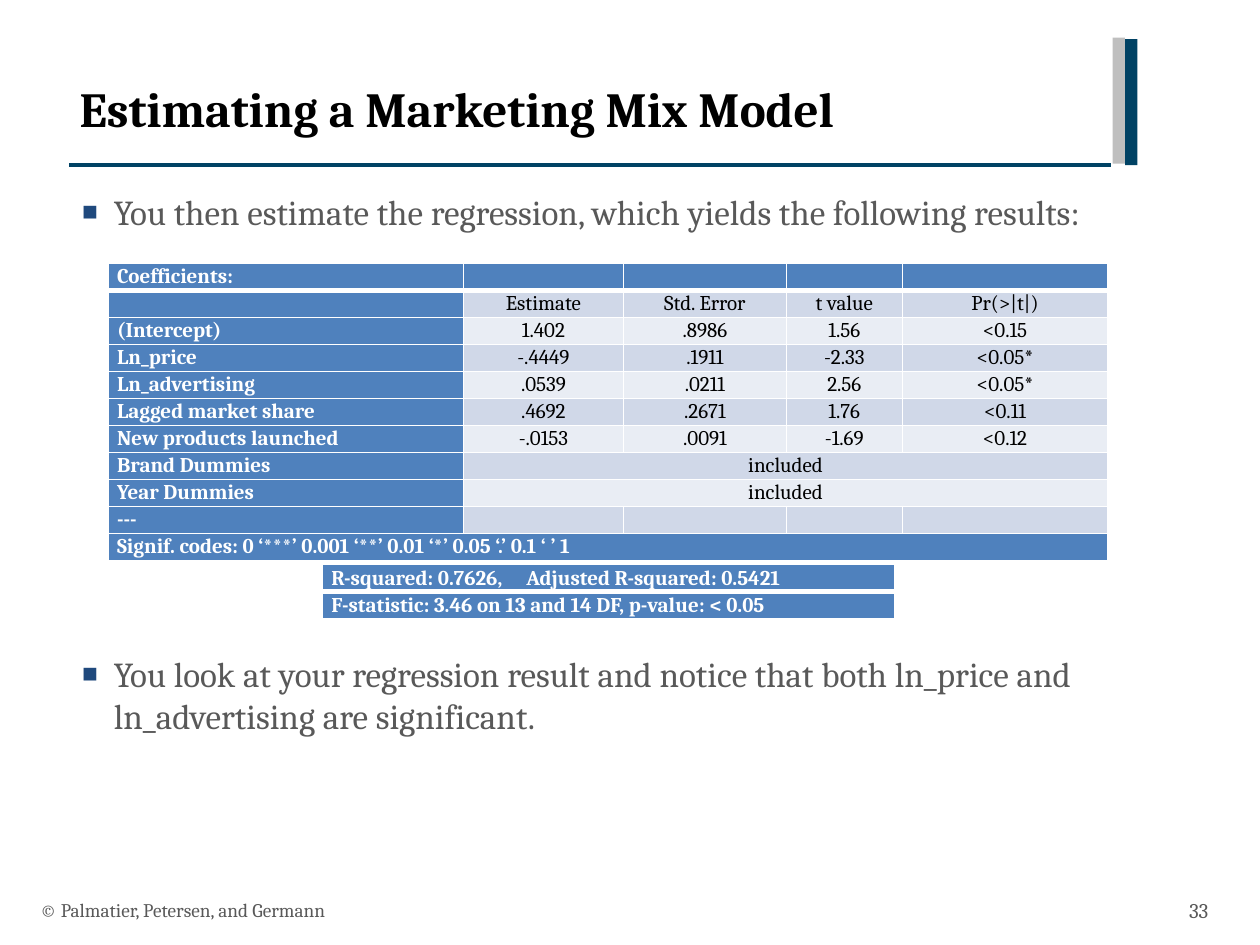
from dataclasses import dataclass
from typing import NamedTuple

from lxml import etree
from pptx import Presentation
from pptx.dml.color import RGBColor
from pptx.enum.shapes import MSO_CONNECTOR, MSO_SHAPE
from pptx.enum.text import MSO_ANCHOR, MSO_AUTO_SIZE, PP_ALIGN
from pptx.oxml.ns import qn
from pptx.util import Cm, Pt

LEFT, MID, RIGHT = PP_ALIGN.LEFT, PP_ALIGN.CENTER, PP_ALIGN.RIGHT
TOP, CENTRE = MSO_ANCHOR.TOP, MSO_ANCHOR.MIDDLE
FIXED = MSO_AUTO_SIZE.NONE
RECT, STRAIGHT = MSO_SHAPE.RECTANGLE, MSO_CONNECTOR.STRAIGHT


@dataclass(frozen=True)
class Theme:
    face: str = "Cambria"
    ink: str = "000000"
    text: str = "595959"
    white: str = "FFFFFF"
    navy: str = "004264"
    silver: str = "BFBFBF"
    mark: str = "1F497D"
    head: str = "4F81BD"
    dark: str = "D0D8E8"
    light: str = "E9EDF4"
    title: int = 28
    body: int = 20
    cell: int = 12
    page: int = 12
    credit: int = 11


class Box(NamedTuple):
    left: float
    top: float
    width: float
    height: float


class Bar(NamedTuple):
    box: Box
    fill: str


class Note(NamedTuple):
    text: str
    box: Box
    size: int
    align: PP_ALIGN


class Grid(NamedTuple):
    left: float
    top: float
    cols: list[float]
    rows: list[list[str]]
    thick: int  # index of the row with the heavy lower border


THEME = Theme()
ROW = 0.52
BARS = [
    Bar(Box(22.68, 0.79, 0.25, 2.54), THEME.navy),
    Bar(Box(22.43, 0.76, 0.25, 2.54), THEME.silver),
]
NOTES = [
    Note("© Palmatier, Petersen, and Germann", Box(0.56, 17.83, 17.02, 1.02),
         THEME.credit, LEFT),
    Note("33", Box(23.06, 17.83, 1.55, 1.02), THEME.page, RIGHT),
]
POINTS = [
    ("You then estimate the regression, which yields the following results:", 0),
    ("You look at your regression result and notice that both ln_price and "
     "ln_advertising are significant.", 240),
]
# A row shorter than the grid has its last cell spread over the rest.
MODEL = Grid(2.18, 5.31, [7.16, 3.23, 3.28, 2.34, 4.14], [
    ["Coefficients:", "", "", "", ""],
    ["", "Estimate", "Std. Error", "t value", "Pr(>|t|)"],
    ["(Intercept)", "1.402", ".8986", "1.56", "<0.15"],
    ["Ln_price", "-.4449", ".1911", "-2.33", "<0.05*"],
    ["Ln_advertising", ".0539", ".0211", "2.56", "<0.05*"],
    ["Lagged market share", ".4692", ".2671", "1.76", "<0.11"],
    ["New products launched", "-.0153", ".0091", "-1.69", "<0.12"],
    ["Brand Dummies", "included"],
    ["Year Dummies", "included"],
    ["---", "", "", "", ""],
    ["Signif. codes: 0 ‘***’ 0.001 ‘**’ 0.01 ‘*’ 0.05 ‘.’ 0.1 ‘ ’ 1"],
], 0)
FIT = Grid(6.5, 11.38, [11.53], [
    ["R-squared: 0.7626,\tAdjusted R-squared: 0.5421"],
    ["F-statistic: 3.46 on 13 and 14 DF, p-value: < 0.05"],
], 0)


def rgb(code: str) -> RGBColor:
    return RGBColor.from_string(code)


def add(parent, tag: str, **attrs):
    return etree.SubElement(parent, qn(tag), attrs)


def apply(thing, values: dict) -> None:
    for name, value in values.items():
        setattr(thing, name, value)


def place(shape, box: Box) -> None:
    apply(shape, {name: Cm(size) for name, size in box._asdict().items()})


def write(para, text: str, size: int, tint: str, bold: bool = False) -> None:
    run = para.add_run()
    run.text = text
    apply(run.font, {"name": THEME.face, "size": Pt(size), "bold": bold})
    run.font.color.rgb = rgb(tint)


def draw_rule(slide) -> None:
    rule = slide.shapes.add_connector(STRAIGHT, Cm(1.4), Cm(3.33), Cm(22.4), Cm(3.33))
    rule.line.width = Pt(2)
    rule.line.color.rgb = rgb(THEME.navy)
    add(rule._element.spPr, "a:effectLst")


def draw_bar(slide, bar: Bar) -> None:
    shape = slide.shapes.add_shape(RECT, *map(Cm, bar.box))
    shape.shadow.inherit = False
    shape.fill.solid()
    shape.fill.fore_color.rgb = rgb(bar.fill)
    shape.line.fill.background()


def draw_note(slide, note: Note) -> None:
    frame = slide.shapes.add_textbox(*map(Cm, note.box)).text_frame
    apply(frame, {"word_wrap": True, "vertical_anchor": CENTRE})
    para = frame.paragraphs[0]
    para.alignment = note.align
    write(para, note.text, note.size, THEME.text)


def fill_title(shape) -> None:
    place(shape, Box(1.35, 1.45, 20.98, 2.24))
    frame = shape.text_frame
    apply(frame, {"vertical_anchor": TOP, "auto_size": FIXED})
    para = frame.paragraphs[0]
    para.alignment = LEFT
    write(para, "Estimating a Marketing Mix Model", THEME.title, THEME.ink, True)


def fill_body(shape) -> None:
    place(shape, Box(1.4, 3.71, 23.22, 13.74))
    frame = shape.text_frame
    frame.auto_size = FIXED
    for i, (text, gap) in enumerate(POINTS):
        para = frame.add_paragraph() if i else frame.paragraphs[0]
        para.space_before = Pt(gap)
        props = para._p.get_or_add_pPr()
        props.set("marL", str(Cm(0.64)))
        props.set("indent", str(Cm(-0.64)))
        add(add(props, "a:buClr"), "a:srgbClr", val=THEME.mark)
        add(props, "a:buSzPct", val="75000")
        add(props, "a:buFont", typeface="Arial")
        add(props, "a:buChar", char="■")
        write(para, text, THEME.body, THEME.text)


def edge(cell, low: int) -> None:
    """Give a cell white borders, the lower one `low` points wide."""
    props = cell._tc.get_or_add_tcPr()
    for side, width in zip("LRTB", (1, 1, 1, low)):
        line = add(props, f"a:ln{side}", w=str(Pt(width)))
        add(add(line, "a:solidFill"), "a:srgbClr", val=THEME.white)


def fill_cell(cell, text: str, fill: str, head: bool) -> None:
    apply(cell, {"margin_left": Cm(0.18), "margin_right": Cm(0.18),
                 "margin_top": 0, "margin_bottom": 0})
    cell.fill.solid()
    cell.fill.fore_color.rgb = rgb(fill)
    para = cell.text_frame.paragraphs[0]
    apply(para, {"alignment": LEFT if head else MID, "line_spacing": 1.07})
    if "\t" in text:
        tabs = add(para._p.get_or_add_pPr(), "a:tabLst")
        add(tabs, "a:tab", pos=str(Cm(3.93)), algn="l")
    if text:
        write(para, text, THEME.cell, THEME.white if head else THEME.ink, head)
    else:
        add(para._p, "a:endParaRPr", sz=str(THEME.cell * 100))


def draw_grid(slide, grid: Grid) -> None:
    wide, tall = len(grid.cols), len(grid.rows)
    table = slide.shapes.add_table(tall, wide, Cm(grid.left), Cm(grid.top),
                                   Cm(sum(grid.cols)), Cm(ROW * tall)).table
    apply(table, {"first_row": False, "horz_banding": False})
    for col, width in zip(table.columns, grid.cols):
        col.width = Cm(width)
    for r, texts in enumerate(grid.rows):
        table.rows[r].height = Cm(ROW)
        for c in range(wide):
            edge(table.cell(r, c), 3 if r == grid.thick else 1)
        last = len(texts) - 1
        if last < wide - 1:
            table.cell(r, last).merge(table.cell(r, wide - 1))
        for c, text in enumerate(texts):
            head = r == 0 or c == 0
            band = THEME.dark if r % 2 else THEME.light
            fill_cell(table.cell(r, c), text, THEME.head if head else band, head)


def main() -> None:
    deck = Presentation()
    apply(deck, {"slide_width": Cm(25.4), "slide_height": Cm(19.05)})
    slide = deck.slides.add_slide(deck.slide_layouts[1])
    draw_rule(slide)
    for bar in BARS:
        draw_bar(slide, bar)
    fill_title(slide.shapes.title)
    fill_body(slide.placeholders[1])
    for note in NOTES:
        draw_note(slide, note)
    for grid in (MODEL, FIT):
        draw_grid(slide, grid)
    deck.save("out.pptx")


if __name__ == "__main__":
    main()
